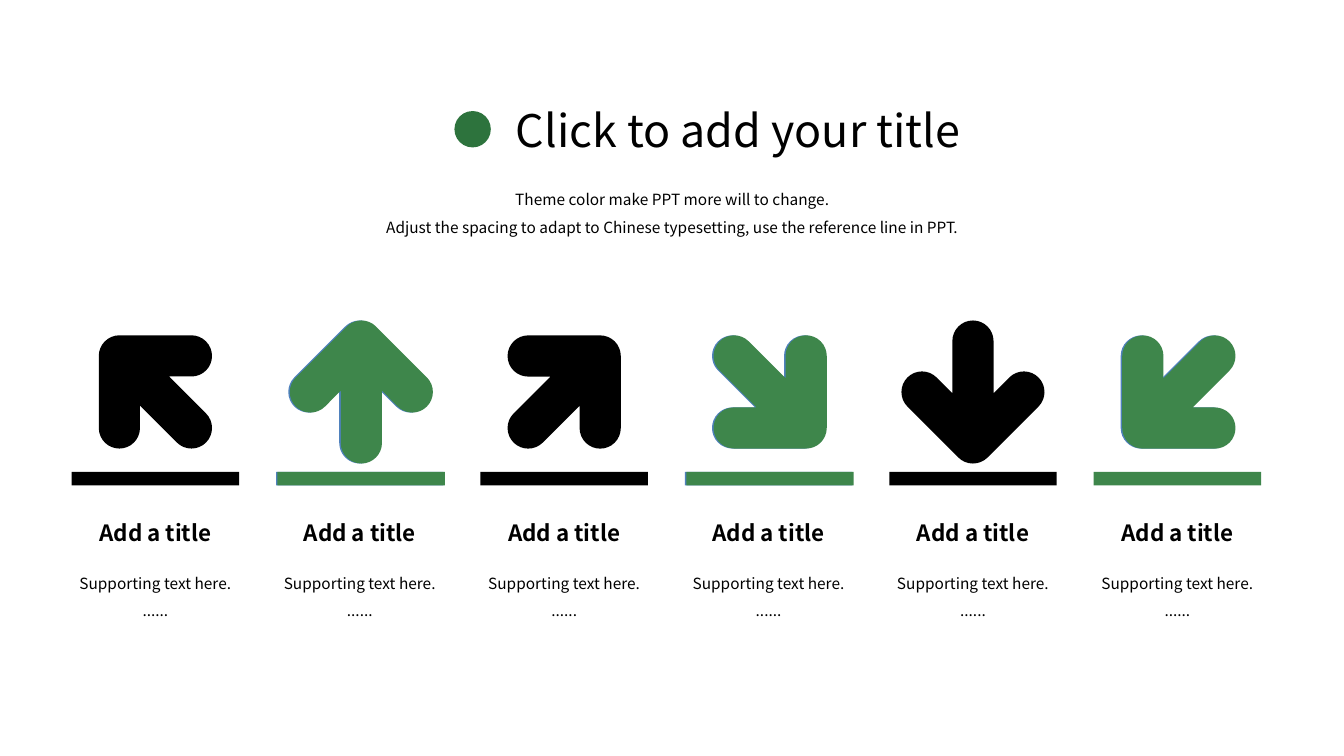
from math import cos, radians, sin, sqrt, tan

from lxml.etree import SubElement
from pptx import Presentation
from pptx.dml.color import RGBColor
from pptx.enum.shapes import MSO_SHAPE
from pptx.enum.text import MSO_ANCHOR, PP_ALIGN
from pptx.oxml.ns import qn
from pptx.util import Pt

FONT = "Noto Sans CJK JP"
BLACK, GREEN, DARK_GREEN, BLUE = "000000", "3E864B", "2D733D", "4F81BD"


def paint(shape, color):
    shape.shadow.inherit = False
    shape.fill.solid()
    shape.fill.fore_color.rgb = RGBColor.from_string(color)
    shape.line.fill.background()


def add_text(left, top, width, height, lines, size, bold=False,
             align=PP_ALIGN.CENTER, spacing=None, anchor=MSO_ANCHOR.TOP):
    box = slide.shapes.add_textbox(Pt(left), Pt(top), Pt(width), Pt(height))
    frame = box.text_frame
    frame.word_wrap = True
    frame.vertical_anchor = anchor
    for index, line in enumerate(lines):
        paragraph = frame.paragraphs[0] if index == 0 else frame.add_paragraph()
        paragraph.alignment = align
        paragraph.line_spacing = spacing
        run = paragraph.add_run()
        run.text = line
        run.font.name = FONT
        run.font.size = Pt(size)
        run.font.bold = bold
        run.font.color.rgb = RGBColor.from_string(BLACK)


presentation = Presentation()
presentation.slide_width, presentation.slide_height = Pt(960), Pt(540)
slide = presentation.slides.add_slide(presentation.slide_layouts[6])

# Heading
add_text(361.5, 70, 393, 46, ["Click to add your title"], 32, align=PP_ALIGN.LEFT)
dot = slide.shapes.add_shape(MSO_SHAPE.OVAL, Pt(324.6), Pt(79.3), Pt(26), Pt(26))
paint(dot, DARK_GREEN)
add_text(53.3, 126, 854, 47, [
    "Theme color make PPT more will to change.",
    "Adjust the spacing to adapt to Chinese typesetting, use the reference line in PPT.",
], 11, spacing=1.5)

# Outline of an arrow pointing left: round ends, split at the quadrants,
# joined by straight edges; curve_starts marks the first control point of each arc
REACH, RADIUS = 36.4, 14.7
corner = RADIUS * sqrt(2) + RADIUS - REACH
outline, curve_starts = [], []
for center_x, center_y, stops, inner_corner in [
    (-REACH, 0, (135, 180, 225), None),
    (0, -REACH, (225, 270, 360, 405), (corner, -RADIUS)),
    (REACH, 0, (270, 360, 450), (corner, RADIUS)),
    (0, REACH, (315, 360, 450, 495), None),
]:
    first = radians(stops[0])
    outline.append((center_x + RADIUS * cos(first), center_y + RADIUS * sin(first)))
    for start, end in zip(stops, stops[1:]):
        a, b = radians(start), radians(end)
        pull = 4 / 3 * tan((b - a) / 4)
        curve_starts.append(len(outline))
        for x, y in [(cos(a) - pull * sin(a), sin(a) + pull * cos(a)),
                     (cos(b) + pull * sin(b), sin(b) - pull * cos(b)),
                     (cos(b), sin(b))]:
            outline.append((center_x + RADIUS * x, center_y + RADIUS * y))
    if inner_corner:
        outline.append(inner_corner)

# Six columns: rotation, side the unrotated arrow points to (1 left, -1 right),
# then layers of (colour, arrow shift, bar shift); None leaves the bar out
FIRST_CENTER, PITCH = 111, 146
plain = [(BLACK, 0, 0)]
edged = [(BLUE, 0, 0), (GREEN, 1.1, 1)]
columns = [
    (45, 1, plain),
    (90, 1, edged),
    (315, -1, plain),
    (45, -1, edged),
    (270, 1, plain),
    (315, 1, [(BLUE, 0, None), (GREEN, 1.1, 0)]),
]
for index, (rotation, side, layers) in enumerate(columns):
    center = FIRST_CENTER + index * PITCH

    # Arrow and bar
    for color, arrow_shift, bar_shift in layers:
        points = [(Pt(center + arrow_shift + side * x), Pt(280 + y)) for x, y in outline]
        builder = slide.shapes.build_freeform(*points[0])
        builder.add_line_segments(points[1:], close=True)
        arrow = builder.convert_to_shape()
        arrow.rotation = rotation
        paint(arrow, color)

        # Turn each arc's three line ends into one curve
        outline_node = next(arrow.element.iter(qn("a:path")))
        segments = list(outline_node)
        for start in curve_starts:
            curve = SubElement(outline_node, qn("a:cubicBezTo"))
            segments[start].addprevious(curve)
            for segment in segments[start:start + 3]:
                curve.append(segment[0])
                outline_node.remove(segment)

        if bar_shift is not None:
            bar = slide.shapes.add_shape(MSO_SHAPE.RECTANGLE, Pt(center + bar_shift - 59.8),
                                         Pt(337), Pt(119.6), Pt(9.8))
            paint(bar, color)

    # Captions
    add_text(center - 62.6, 361.4, 125.2, 38.2, ["Add a title"], 16, bold=True,
             anchor=MSO_ANCHOR.MIDDLE)
    add_text(center - 62.6, 399.6, 125.2, 61, ["Supporting text here.", "......"], 11,
             spacing=1.5)

presentation.save("out.pptx")
